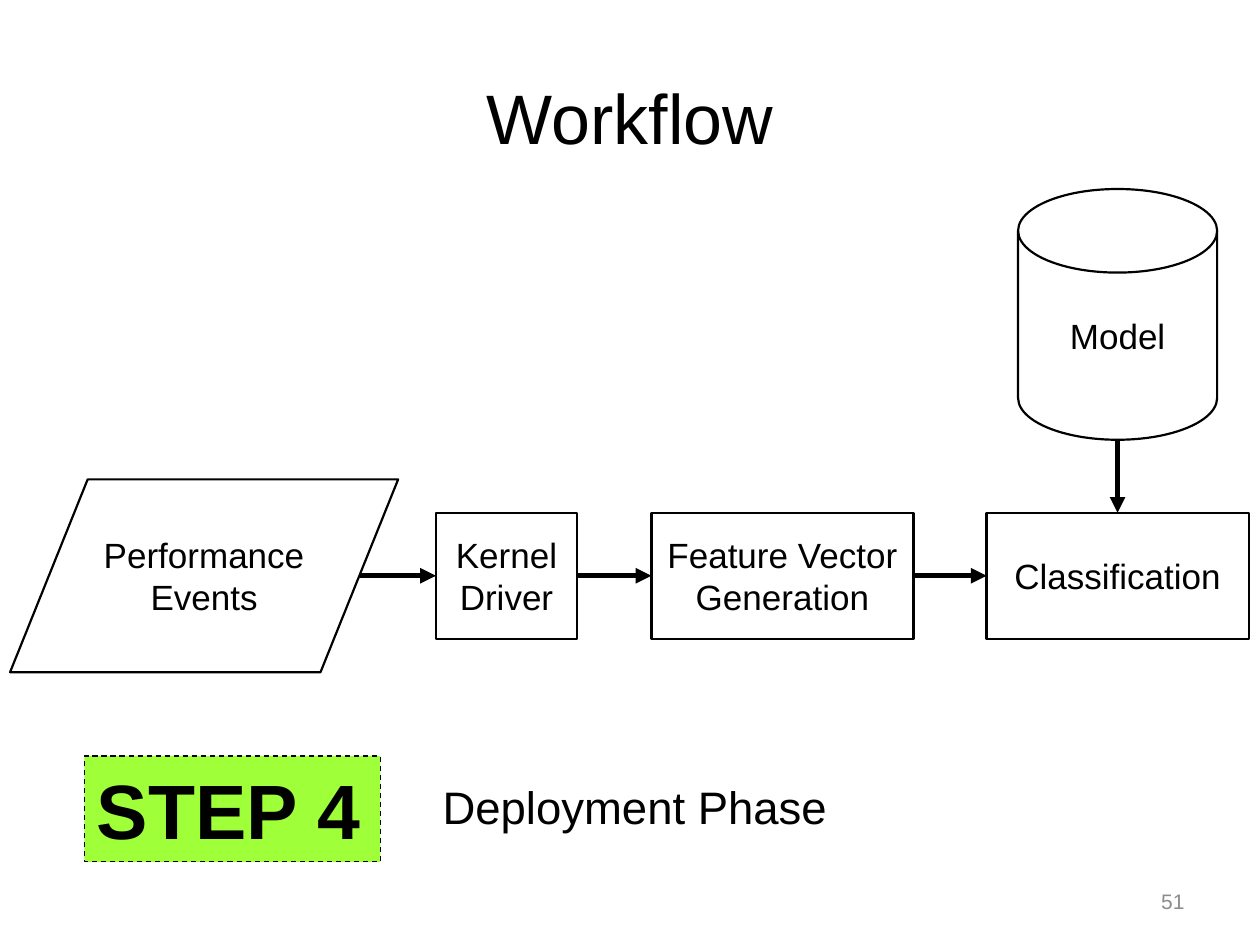
from dataclasses import dataclass

from lxml import etree
from pptx import Presentation
from pptx.dml.color import RGBColor
from pptx.enum.dml import MSO_LINE
from pptx.enum.shapes import MSO_CONNECTOR, MSO_SHAPE
from pptx.enum.text import MSO_ANCHOR, PP_ALIGN
from pptx.oxml.ns import qn
from pptx.util import Inches, Pt

PROCESS = MSO_SHAPE.FLOWCHART_PROCESS
DATA = MSO_SHAPE.FLOWCHART_DATA
DISK = MSO_SHAPE.FLOWCHART_MAGNETIC_DISK
RECTANGLE = MSO_SHAPE.RECTANGLE
STRAIGHT = MSO_CONNECTOR.STRAIGHT
DASH = MSO_LINE.DASH
TOP, MIDDLE = MSO_ANCHOR.TOP, MSO_ANCHOR.MIDDLE
LEFT, CENTER, RIGHT = PP_ALIGN.LEFT, PP_ALIGN.CENTER, PP_ALIGN.RIGHT
TOP_SIDE, LEFT_SIDE, RIGHT_SIDE = 0, 1, 3

FONT = "Arial"
BLACK, WHITE, GRAY, GREEN = "000000", "FFFFFF", "8C8C8C", "9FFF38"
FLOW_Y = 4.57  # shared centre line of the flow


@dataclass
class Node:
    text: str
    kind: int
    left: float
    width: float
    height: float
    middle: float = FLOW_Y


@dataclass
class Label:
    text: str
    left: float
    top: float
    width: float
    height: float
    size: int
    align: int = CENTER
    anchor: int = MIDDLE
    color: str = BLACK


EVENTS = Node("Performance Events", DATA, 0.08, 3.08, 1.53)
MODEL = Node("Model", DISK, 8.08, 1.58, 1.99, 2.495)
STEPS = [
    Node("Kernel Driver", PROCESS, 3.46, 1.12, 1),
    Node("Feature Vector Generation", PROCESS, 5.17, 2.08, 1),
    Node("Classification", PROCESS, 7.83, 2.08, 1),
]
LABELS = [
    Label("Workflow", 0.5, 0.3, 9, 1.25, 40),
    Label("Deployment Phase", 0.33, 6.13, 9.42, 0.54, 26, anchor=TOP),
    Label("51", 7.17, 6.95, 2.33, 0.4, 12, RIGHT, color=GRAY),
]


def rgb(color: str) -> RGBColor:
    return RGBColor.from_string(color)


def write(shape, text: str, size: int, align: int = CENTER,
          anchor: int = MIDDLE, color: str = BLACK, bold: bool = False) -> None:
    frame = shape.text_frame
    frame.word_wrap = True
    frame.vertical_anchor = anchor
    para = frame.paragraphs[0]
    para.text = text
    para.alignment = align
    para.font.name = FONT
    para.font.size = Pt(size)
    para.font.bold = bold
    para.font.color.rgb = rgb(color)


def add_box(page, kind: int, left: float, top: float, width: float,
            height: float, fill: str, line_width: float):
    box = page.shapes.add_shape(kind, Inches(left), Inches(top),
                                Inches(width), Inches(height))
    box.shadow.inherit = False
    box.fill.solid()
    box.fill.fore_color.rgb = rgb(fill)
    box.line.color.rgb = rgb(BLACK)
    box.line.width = Pt(line_width)
    return box


def add_node(page, node: Node):
    box = add_box(page, node.kind, node.left, node.middle - node.height / 2,
                  node.width, node.height, WHITE, 1.25)
    write(box, node.text, 20)
    frame = box.text_frame
    frame.margin_left = frame.margin_right = Inches(0.11)
    return box


def add_label(page, label: Label) -> None:
    box = page.shapes.add_textbox(Inches(label.left), Inches(label.top),
                                  Inches(label.width), Inches(label.height))
    write(box, label.text, label.size, label.align, label.anchor, label.color)


def add_arrow(page, start: tuple[float, float], end: tuple[float, float]):
    arrow = page.shapes.add_connector(
        STRAIGHT, *(Inches(value) for value in (*start, *end)))
    arrow.line.color.rgb = rgb(BLACK)
    arrow.line.width = Pt(3)
    etree.SubElement(arrow.line._get_or_add_ln(), qn("a:tailEnd"), type="triangle")
    etree.SubElement(arrow._element.spPr, qn("a:effectLst"))
    return arrow


def main() -> None:
    deck = Presentation()
    deck.slide_width, deck.slide_height = Inches(10), Inches(7.5)
    page = deck.slides.add_slide(deck.slide_layouts[6])

    # Title, phase name and page number
    for label in LABELS:
        add_label(page, label)

    # Flow nodes
    add_node(page, EVENTS)
    add_node(page, MODEL)
    boxes = [add_node(page, step) for step in STEPS]

    # Arrows from the data shapes into the process boxes
    events_arrow = add_arrow(page, (2.86, FLOW_Y), (STEPS[0].left, FLOW_Y))
    events_arrow.end_connect(boxes[0], LEFT_SIDE)
    model_x = MODEL.left + MODEL.width / 2
    model_arrow = add_arrow(page, (model_x, MODEL.middle + MODEL.height / 2),
                            (model_x, FLOW_Y - STEPS[-1].height / 2))
    model_arrow.end_connect(boxes[-1], TOP_SIDE)

    # Arrows between neighbouring process boxes
    for index in range(len(STEPS) - 1):
        source, target = STEPS[index], STEPS[index + 1]
        arrow = add_arrow(page, (source.left + source.width, FLOW_Y),
                          (target.left, FLOW_Y))
        arrow.begin_connect(boxes[index], RIGHT_SIDE)
        arrow.end_connect(boxes[index + 1], LEFT_SIDE)

    # Step badge
    badge = add_box(page, RECTANGLE, 0.67, 6, 2.35, 0.84, GREEN, 0.75)
    badge.line.dash_style = DASH
    write(badge, "STEP 4", 44, LEFT, TOP, bold=True)

    deck.save("out.pptx")


if __name__ == "__main__":
    main()
